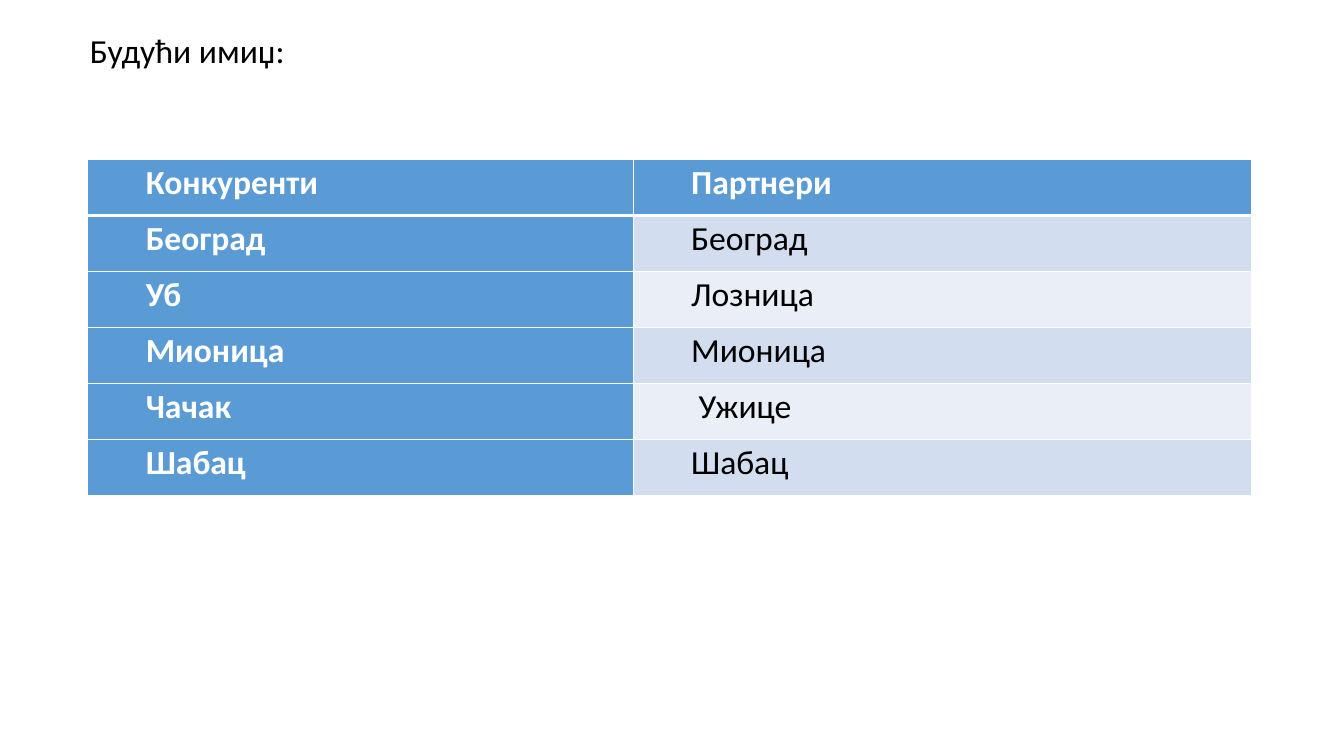
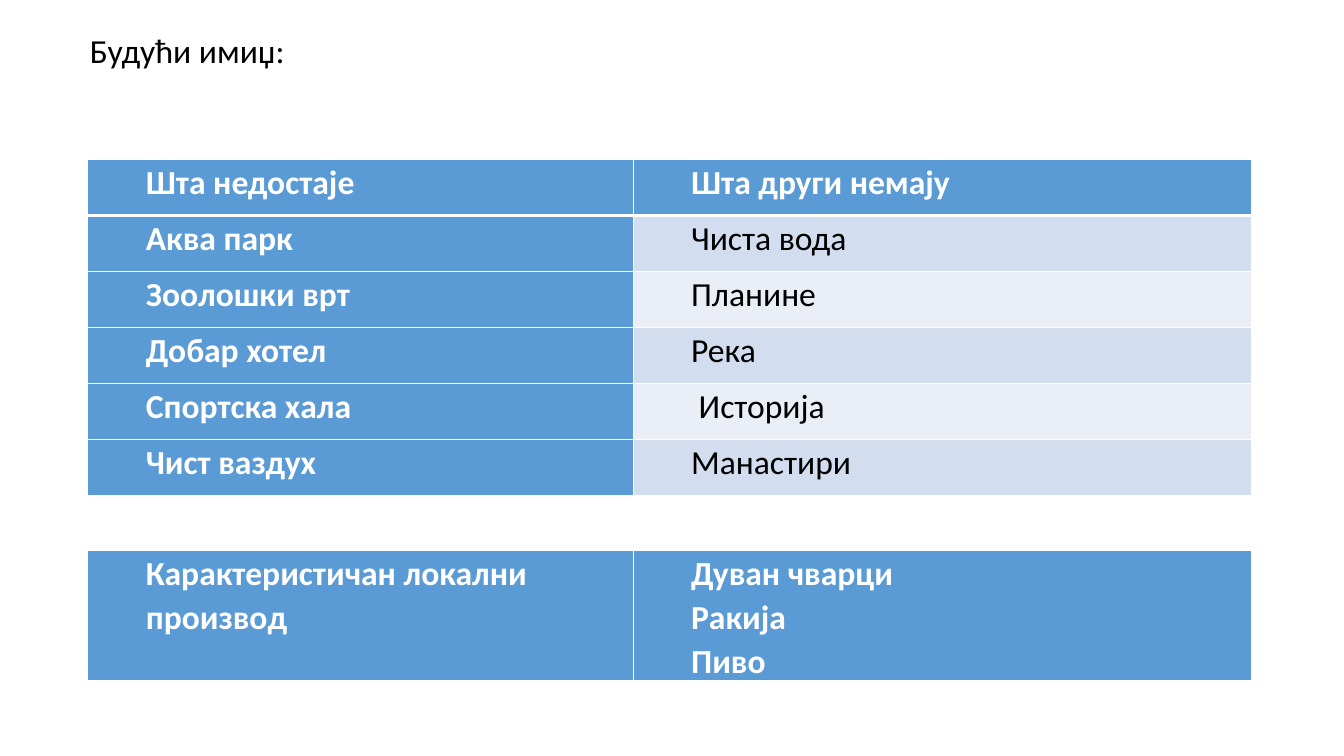
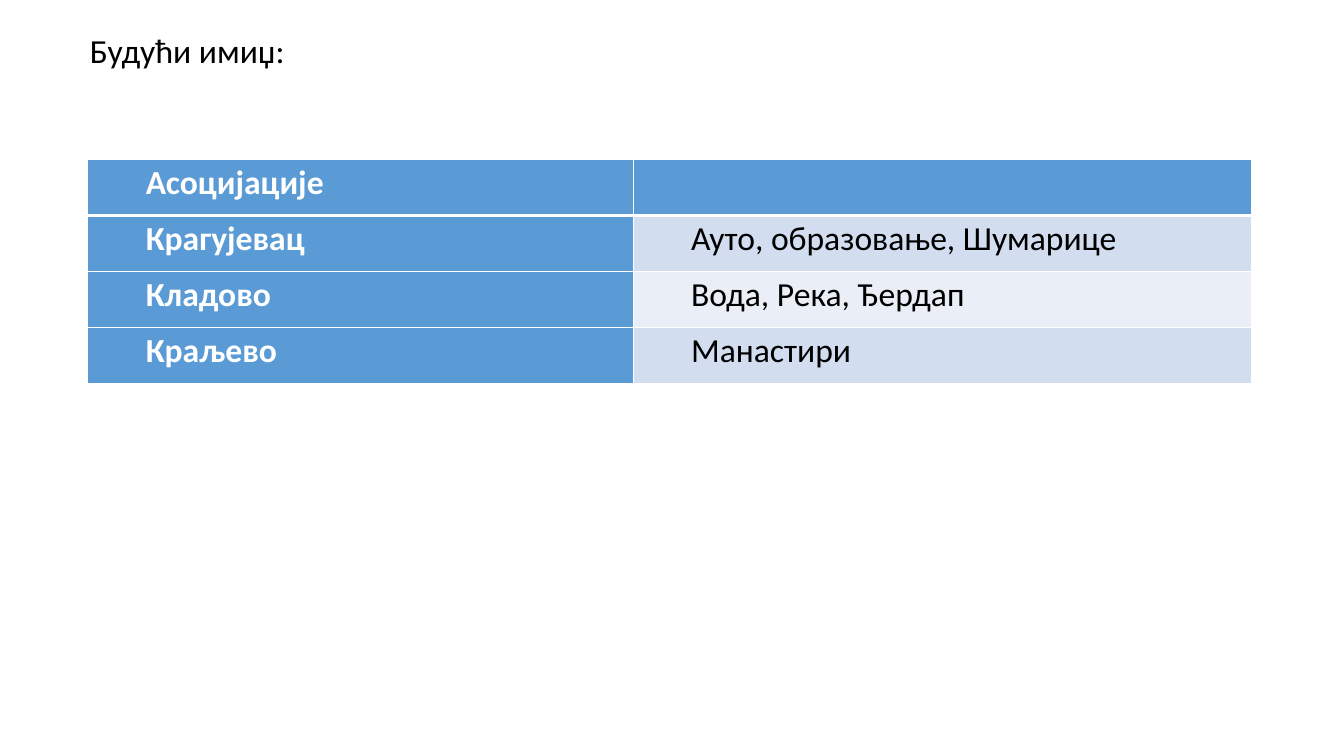
from lxml import etree
from pptx import Presentation
from pptx.dml.color import RGBColor
from pptx.enum import text
from pptx.oxml import ns
from pptx.util import Pt

WHITE = RGBColor(0xFF, 0xFF, 0xFF)
BLACK = RGBColor(0x00, 0x00, 0x00)
BLUE = RGBColor(0x5B, 0x9B, 0xD5)
PALE = RGBColor(0xD2, 0xDE, 0xEF)
PALEST = RGBColor(0xEA, 0xEF, 0xF7)

FONT = "Calibri"
TEXT_SIZE = 24
TITLE = "Будући имиџ:"

TABLE_LEFT = 62.8
TABLE_TOP = 114
COLUMN_WIDTHS = (389.5, 442)
ROW_HEIGHT = 40
TEXT_INDENT = 36
THIN, THICK = 1, 3

RIVALS = [
    ("Конкуренти", "Партнери"),
    ("Београд", "Београд"),
    ("Уб", "Лозница"),
    ("Мионица", "Мионица"),
    ("Чачак", " Ужице"),
    ("Шабац", "Шабац"),
]
OFFER = [
    ("Шта недостаје", "Шта други немају"),
    ("Аква парк", "Чиста вода"),
    ("Зоолошки врт", "Планине"),
    ("Добар хотел", "Река"),
    ("Спортска хала", " Историја"),
    ("Чист ваздух", "Манастири"),
]
LOCAL_PRODUCTS = [
    ("Карактеристичан локални производ", "Дуван чварци\nРакија\nПиво"),
]
ASSOCIATIONS = [
    ("Асоцијације", ""),
    ("Крагујевац", "Ауто, образовање, Шумарице"),
    ("Кладово", "Вода, Река, Ђердап"),
    ("Краљево", "Манастири"),
]


def set_font(para, color, bold=False):
    para.font.name = FONT
    para.font.size = Pt(TEXT_SIZE)
    para.font.bold = bold
    para.font.color.rgb = color


def add_page(deck):
    page = deck.slides.add_slide(deck.slide_layouts[5])
    title = page.shapes.title
    title.left, title.top = Pt(57), Pt(21)
    title.width, title.height = Pt(780), Pt(39)
    frame = title.text_frame
    frame.text = TITLE
    frame.word_wrap = True
    frame.auto_size = text.MSO_AUTO_SIZE.NONE
    frame.vertical_anchor = text.MSO_ANCHOR.TOP
    para = frame.paragraphs[0]
    para.alignment = text.PP_ALIGN.LEFT
    para.line_spacing = 0.9
    set_font(para, BLACK)
    return page


def add_border(cell, side, width):
    properties = cell._tc.get_or_add_tcPr()
    line = etree.SubElement(properties, ns.qn(f"a:ln{side}"), w=str(Pt(width)))
    fill = etree.SubElement(line, ns.qn("a:solidFill"))
    etree.SubElement(fill, ns.qn("a:srgbClr"), val=str(WHITE))


def fill_cell(cell, words, row, column):
    strong = row == 0 or column == 0
    borders = {
        "L": THIN,
        "R": THIN,
        "T": THICK if row == 1 else THIN,
        "B": THICK if row == 0 else THIN,
    }
    for side, width in borders.items():
        add_border(cell, side, width)
    cell.fill.solid()
    cell.fill.fore_color.rgb = BLUE if strong else PALE if row % 2 else PALEST
    cell.margin_left = cell.margin_right = Pt(5.4)
    cell.margin_top = cell.margin_bottom = Pt(0)
    cell.text = words
    for para in cell.text_frame.paragraphs:
        para.line_spacing = 1.07
        para._p.get_or_add_pPr().set("marL", str(Pt(TEXT_INDENT)))
        set_font(para, WHITE if strong else BLACK, strong)


def add_grid(page, rows, top=TABLE_TOP, row_height=ROW_HEIGHT):
    frame = page.shapes.add_table(
        len(rows), len(COLUMN_WIDTHS), Pt(TABLE_LEFT), Pt(top),
        Pt(sum(COLUMN_WIDTHS)), Pt(row_height * len(rows)))
    table = frame.table
    table.first_col = True
    for column, width in zip(table.columns, COLUMN_WIDTHS):
        column.width = Pt(width)
    for row, entries in enumerate(rows):
        table.rows[row].height = Pt(row_height)
        for column, words in enumerate(entries):
            fill_cell(table.cell(row, column), words, row, column)


def main():
    deck = Presentation()
    deck.slide_width, deck.slide_height = Pt(960), Pt(540)
    for rows in (RIVALS, OFFER, ASSOCIATIONS):
        page = add_page(deck)
        add_grid(page, rows)
        if rows is OFFER:
            add_grid(page, LOCAL_PRODUCTS, top=393.3, row_height=92.5)
    deck.save("out.pptx")


if __name__ == "__main__":
    main()
